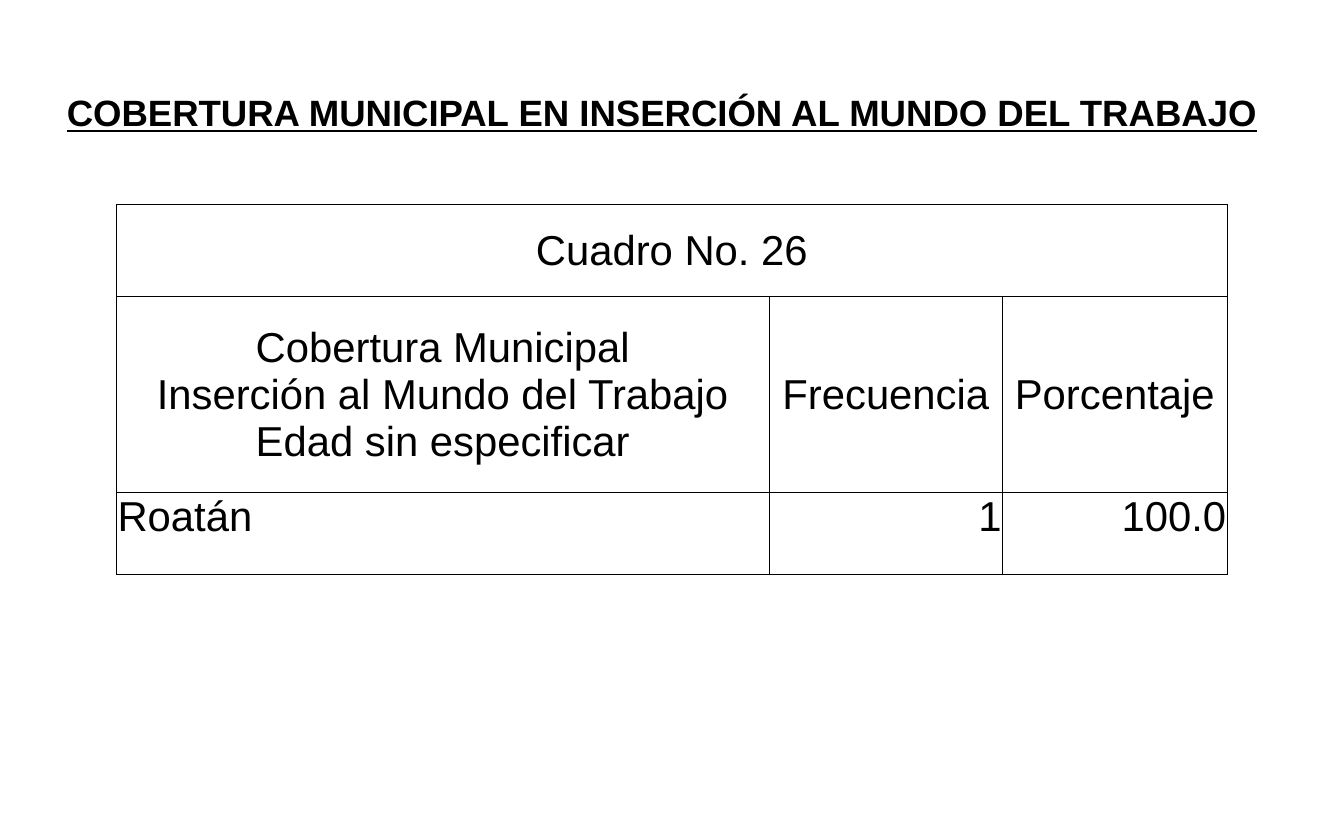
from lxml.etree import SubElement
from pptx import Presentation
from pptx.dml.color import RGBColor
from pptx.enum.text import MSO_ANCHOR as Anchor, PP_ALIGN as Align
from pptx.oxml.ns import qn
from pptx.util import Inches, Pt

# Content
TITLE = "COBERTURA MUNICIPAL EN INSERCIÓN AL MUNDO DEL TRABAJO"
CAPTION = "Cuadro No. 26"
HEADINGS = [
    "Cobertura Municipal\nInserción al Mundo del Trabajo\nEdad sin especificar",
    "Frecuencia",
    "Porcentaje",
]
VALUES = ["Roatán", "1", "100.0"]

# Layout and formats
COLORS = {"ink": "000000"}
COLUMN_WIDTHS = [6.94, 2.48, 2.39]
ROW_HEIGHTS = [0.98, 2.09, 0.87]
TITLE_FONT = {"name": "Arial", "size": Pt(28), "bold": True, "underline": True}
TABLE_FONT = {"name": "Arial", "size": Pt(32), "bold": False}
TITLE_FRAME = {"word_wrap": True, "vertical_anchor": Anchor.TOP,
               "margin_left": Inches(0.1), "margin_right": Inches(0.1),
               "margin_top": Inches(0.05), "margin_bottom": Inches(0.05)}
CELL_MARGINS = {"margin_left": Inches(0.01), "margin_right": Inches(0.01),
                "margin_top": Inches(0.01), "margin_bottom": 0}


def set_attributes(target, values):
    for name, value in values.items():
        setattr(target, name, value)


def write(para, text, font, align):
    para.text = text
    para.alignment = align
    for span in para.runs:
        set_attributes(span.font, font)
        span.font.color.rgb = RGBColor.from_string(COLORS["ink"])


def add_borders(cell):
    properties = cell._tc.get_or_add_tcPr()
    for side in ("a:lnL", "a:lnR", "a:lnT", "a:lnB"):
        line = SubElement(properties, qn(side), w=str(Pt(0.5)))
        fill = SubElement(line, qn("a:solidFill"))
        SubElement(fill, qn("a:srgbClr"), val=COLORS["ink"])


def add_title(page):
    box = page.shapes.title
    set_attributes(box, {"left": Inches(0.61), "top": Inches(0.91),
                         "width": Inches(13.07), "height": Inches(0.57)})
    set_attributes(box.text_frame, TITLE_FRAME)
    write(box.text_frame.paragraphs[0], TITLE, TITLE_FONT, Align.LEFT)


def add_coverage_table(page):
    rows = [[CAPTION, "", ""], HEADINGS, VALUES]
    table = page.shapes.add_table(
        len(rows), len(COLUMN_WIDTHS), Inches(1.24), Inches(2.17),
        Inches(sum(COLUMN_WIDTHS)), Inches(sum(ROW_HEIGHTS))).table
    set_attributes(table, {"first_row": False, "horz_banding": False})
    for column, width in zip(table.columns, COLUMN_WIDTHS):
        column.width = Inches(width)
    for row, height in zip(table.rows, ROW_HEIGHTS):
        row.height = Inches(height)
    table.cell(0, 0).merge(table.cell(0, len(COLUMN_WIDTHS) - 1))

    for r, texts in enumerate(rows):
        is_data = r == len(rows) - 1
        for c, text in enumerate(texts):
            cell = table.cell(r, c)
            set_attributes(cell, CELL_MARGINS)
            cell.vertical_anchor = Anchor.TOP if is_data else Anchor.MIDDLE
            add_borders(cell)
            cell.fill.background()
            align = Align.CENTER
            if is_data:
                align = Align.RIGHT if c else Align.LEFT
            if text:
                write(cell.text_frame.paragraphs[0], text, TABLE_FONT, align)


def main():
    deck = Presentation()
    deck.slide_width, deck.slide_height = Inches(14.29), Inches(8.9)
    page = deck.slides.add_slide(deck.slide_layouts[5])
    add_coverage_table(page)
    add_title(page)
    deck.save("out.pptx")


if __name__ == "__main__":
    main()
